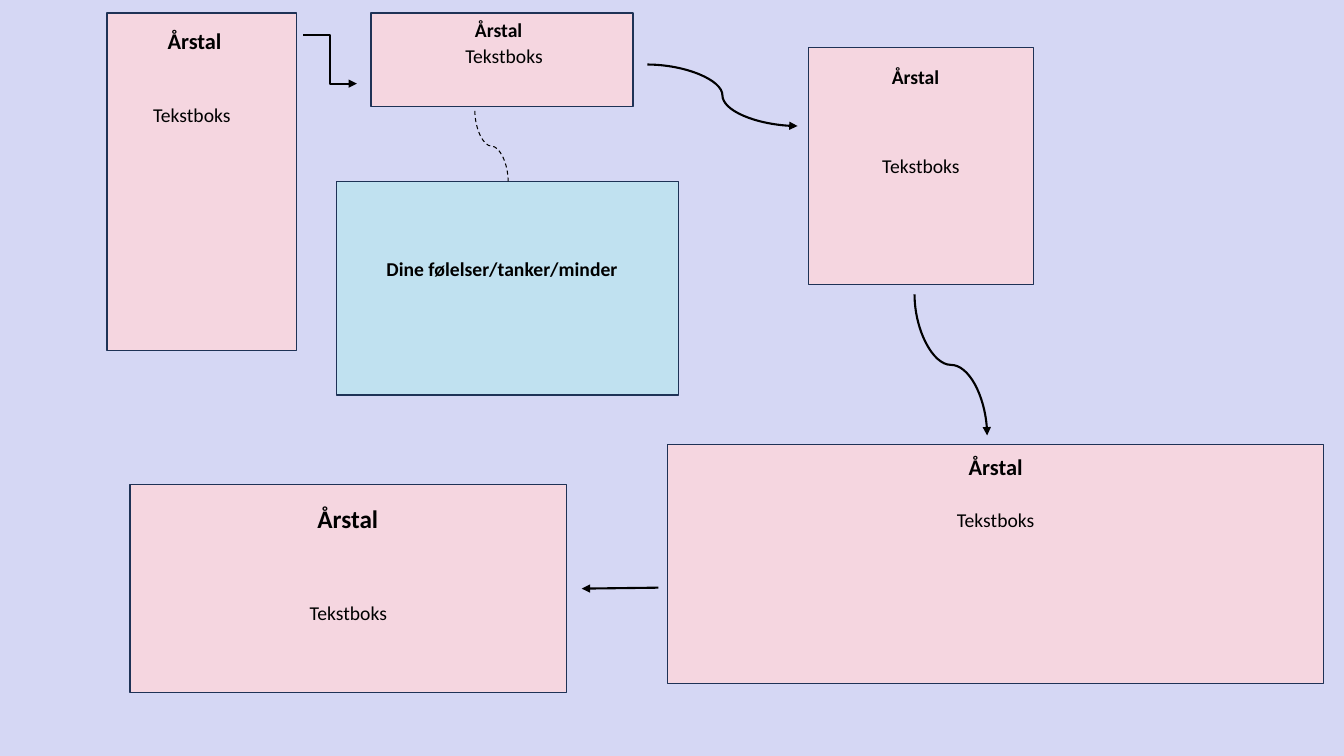
from lxml import etree
from pptx import Presentation
from pptx.dml.color import RGBColor
from pptx.enum.dml import MSO_LINE
from pptx.enum.shapes import MSO_CONNECTOR, MSO_SHAPE
from pptx.enum.text import PP_ALIGN
from pptx.oxml.ns import qn
from pptx.util import Inches, Pt

LAVENDER = RGBColor(0xD5, 0xD7, 0xF4)
PINK = RGBColor(0xF5, 0xD6, 0xE0)
LIGHT_BLUE = RGBColor(0xC0, 0xE1, 0xF0)
NAVY = RGBColor(0x1E, 0x32, 0x56)
BLACK = RGBColor(0x00, 0x00, 0x00)


def add_box(s, box, fill):
    """Draw an outlined rectangle."""
    sp = s.shapes.add_shape(MSO_SHAPE.RECTANGLE, *map(Inches, box))
    sp.shadow.inherit = False
    sp.fill.solid()
    sp.fill.fore_color.rgb = fill
    sp.line.color.rgb = NAVY
    sp.line.width = Pt(1)


def add_text(s, box, text, size=14, bold=False, align=PP_ALIGN.CENTER):
    """Place one line of text."""
    tf = s.shapes.add_textbox(*map(Inches, box)).text_frame
    tf.word_wrap = True
    tf.text = text
    p = tf.paragraphs[0]
    p.alignment = align
    font = p.runs[0].font
    font.name = "Calibri"
    font.size = Pt(size)
    font.bold = bold
    font.color.rgb = BLACK


def add_event(s, box, year_box, year_size, text_box, align=PP_ALIGN.CENTER):
    """Draw a timeline event with its year and text."""
    add_box(s, box, PINK)
    add_text(s, year_box, "Årstal", year_size, True)
    add_text(s, text_box, "Tekstboks", align=align)


def add_link(s, kind, start, end, vertical=False, dashed=False):
    """Connect two points with an arrow, or with a thin dashed line."""
    (x1, y1), (x2, y2) = start, end
    if vertical:
        cx, cy = (x1 + x2) / 2, (y1 + y2) / 2
        dx, dy = (x2 - x1) / 2, (y2 - y1) / 2
        x1, y1, x2, y2 = cx + dy, cy - dx, cx - dy, cy + dx
    c = s.shapes.add_connector(kind, *map(Inches, (x1, y1, x2, y2)))
    spPr = c._element.spPr
    if vertical:
        spPr.find(qn("a:xfrm")).set("rot", "16200000")
    c.line.color.rgb = BLACK
    c.line.width = Pt(0.75 if dashed else 1.5)
    if dashed:
        c.line.dash_style = MSO_LINE.DASH
    else:
        etree.SubElement(spPr.find(qn("a:ln")), qn("a:tailEnd"), type="triangle")
    etree.SubElement(spPr, qn("a:effectLst"))


def main():
    """Build the timeline slide."""
    prs = Presentation()
    prs.slide_width, prs.slide_height = Inches(13.33), Inches(7.5)
    s = prs.slides.add_slide(prs.slide_layouts[6])
    s.background.fill.solid()
    s.background.fill.fore_color.rgb = LAVENDER

    add_event(s, (1.06, 0.13, 1.88, 3.35), (1.25, 0.22, 1.36, 0.37), 16,
              (1.42, 0.97, 1.88, 0.34), PP_ALIGN.LEFT)
    add_event(s, (3.68, 0.13, 2.6, 0.93), (3.94, 0.13, 2.01, 0.34), 14,
              (3.7, 0.39, 2.6, 0.34))
    add_event(s, (8.02, 0.47, 2.23, 2.35), (8.12, 0.59, 1.92, 0.34), 14,
              (8.02, 1.48, 2.23, 0.34))
    add_event(s, (1.29, 4.81, 4.33, 2.06), (1.77, 4.94, 3.36, 0.4), 18,
              (1.29, 5.91, 4.33, 0.34))
    add_event(s, (6.62, 4.41, 6.51, 2.37), (8.9, 4.45, 1.95, 0.37), 16,
              (6.77, 4.99, 6.21, 0.64))

    add_link(s, MSO_CONNECTOR.CURVE, (6.42, 0.64), (7.91, 1.25))
    add_link(s, MSO_CONNECTOR.ELBOW, (3.01, 0.35), (3.54, 0.83))
    add_link(s, MSO_CONNECTOR.CURVE, (9.07, 2.92), (9.79, 4.32), vertical=True)
    add_link(s, MSO_CONNECTOR.STRAIGHT, (6.53, 5.83), (5.77, 5.84))

    add_box(s, (3.34, 1.8, 3.39, 2.12), LIGHT_BLUE)
    add_text(s, (3.43, 2.5, 3.1, 0.64), "Dine følelser/tanker/minder", bold=True)
    add_link(s, MSO_CONNECTOR.CURVE, (4.71, 1.1), (5.04, 1.8), vertical=True, dashed=True)

    prs.save("out.pptx")


if __name__ == "__main__":
    main()
